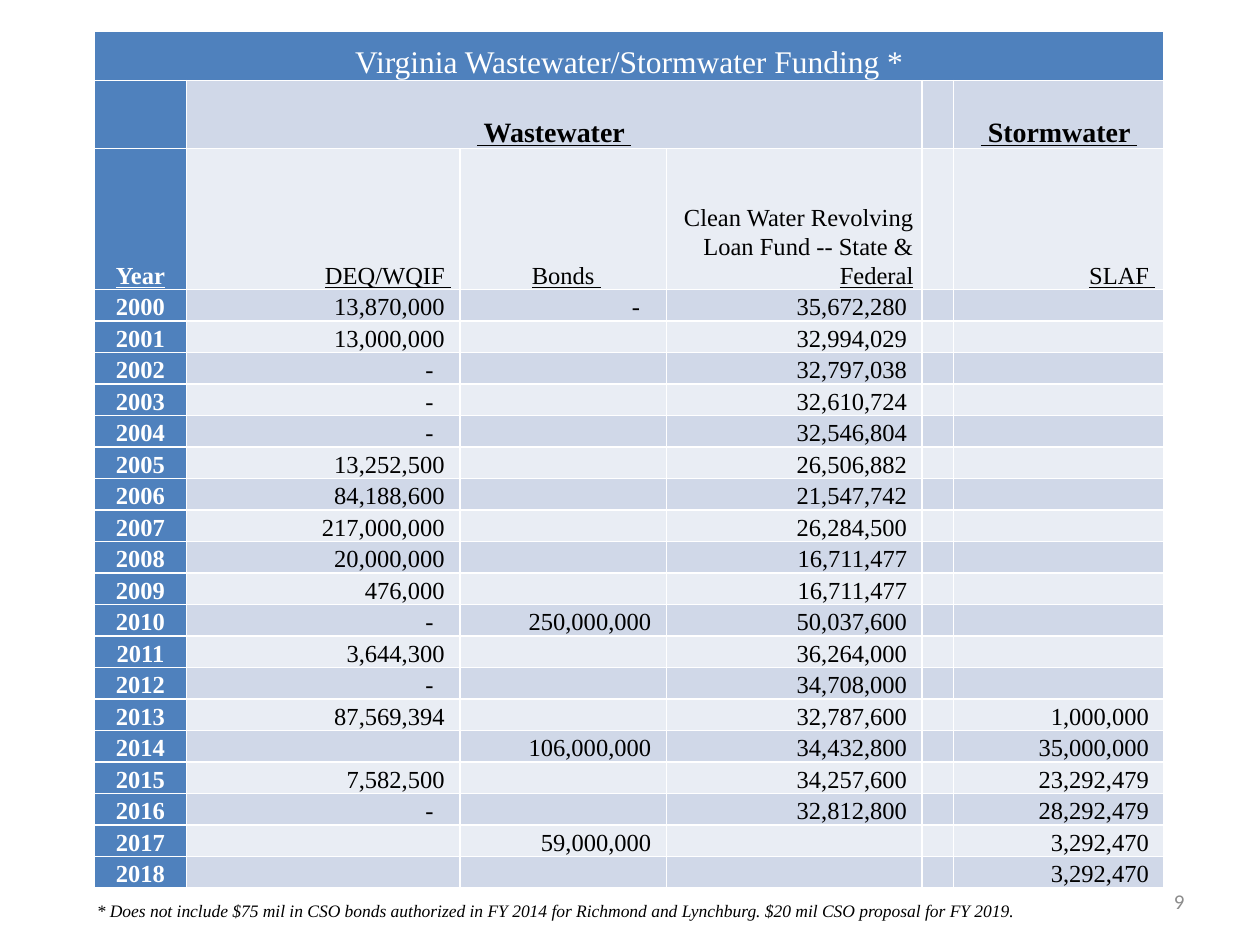
from lxml import etree
from pptx import Presentation
from pptx import util as u
from pptx.dml.color import RGBColor
from pptx.enum import text
from pptx.oxml.ns import qn

SERIF = "Times New Roman"
WHITE, BLACK, BLUE = "FFFFFF", "000000", "4F81BD"
BANDS = ["E9EDF4", "D0D8E8"]
LEFT, CENTER, RIGHT = text.PP_ALIGN.LEFT, text.PP_ALIGN.CENTER, text.PP_ALIGN.RIGHT


def color(hex_string):
    return RGBColor.from_string(hex_string)


def write(paragraph, pieces, size, hue, align, font=SERIF, bold=False, italic=False):
    paragraph.alignment = align
    for words, underline in pieces:
        run = paragraph.add_run()
        run.text = words
        run.font.name, run.font.size = font, u.Pt(size)
        run.font.bold, run.font.italic, run.font.underline = bold, italic, underline
        run.font.color.rgb = color(hue)


funding = [
    ("2000", "13,870,000", "-", "35,672,280", "", ""),
    ("2001", "13,000,000", "", "32,994,029", "", ""),
    ("2002", "-", "", "32,797,038", "", ""),
    ("2003", "-", "", "32,610,724", "", ""),
    ("2004", "-", "", "32,546,804", "", ""),
    ("2005", "13,252,500", "", "26,506,882", "", ""),
    ("2006", "84,188,600", "", "21,547,742", "", ""),
    ("2007", "217,000,000", "", "26,284,500", "", ""),
    ("2008", "20,000,000", "", "16,711,477", "", ""),
    ("2009", "476,000", "", "16,711,477", "", ""),
    ("2010", "-", "250,000,000", "50,037,600", "", ""),
    ("2011", "3,644,300", "", "36,264,000", "", ""),
    ("2012", "-", "", "34,708,000", "", ""),
    ("2013", "87,569,394", "", "32,787,600", "", "1,000,000"),
    ("2014", "", "106,000,000", "34,432,800", "", "35,000,000"),
    ("2015", "7,582,500", "", "34,257,600", "", "23,292,479"),
    ("2016", "-", "", "32,812,800", "", "28,292,479"),
    ("2017", "", "59,000,000", "", "", "3,292,470"),
    ("2018", "", "", "", "", "3,292,470"),
]
headings = {
    (0, 0): ([("Virginia Wastewater/Stormwater Funding *", False)], 18, WHITE, CENTER, False),
    (1, 1): ([(" Wastewater ", True)], 16, BLACK, CENTER, True),
    (1, 5): ([(" Stormwater ", True)], 16, BLACK, CENTER, True),
    (2, 0): ([("Year", True)], 14, WHITE, CENTER, True),
    (2, 1): ([(" ", False), ("DEQ/WQIF ", True)], 14, BLACK, RIGHT, False),
    (2, 2): ([(" ", False), ("Bonds ", True)], 14, BLACK, CENTER, False),
    (2, 3): ([("Clean Water Revolving Loan Fund -- State & ", False), ("Federal", True)],
             14, BLACK, RIGHT, False),
    (2, 5): ([(" ", False), ("SLAF ", True)], 14, BLACK, RIGHT, False),
}
column_widths = [0.73, 2.17, 1.64, 2.03, 0.25, 1.67]
row_heights = [0.39, 0.54, 1.12] + [0.25] * len(funding)

prs = Presentation()
prs.slide_width, prs.slide_height = u.Inches(10), u.Inches(7.5)
slide = prs.slides.add_slide(prs.slide_layouts[6])

page_number = slide.shapes.add_textbox(
    u.Inches(7.17), u.Inches(6.95), u.Inches(2.33), u.Inches(0.4)).text_frame
page_number.word_wrap = True
page_number.vertical_anchor = text.MSO_ANCHOR.MIDDLE
write(page_number.paragraphs[0], [("9", False)], 12, "8C8C8C", RIGHT, font="Calibri")

table = slide.shapes.add_table(
    len(row_heights), len(column_widths), u.Inches(0.75), u.Inches(0.25),
    u.Inches(sum(column_widths)), u.Inches(sum(row_heights))).table
for column, width in zip(table.columns, column_widths):
    column.width = u.Inches(width)
for row, height in zip(table.rows, row_heights):
    row.height = u.Inches(height)
table.cell(0, 0).merge(table.cell(0, 5))
table.cell(1, 1).merge(table.cell(1, 3))

for r in range(len(row_heights)):
    for c in range(len(column_widths)):
        cell = table.cell(r, c)
        cell.fill.solid()
        cell.fill.fore_color.rgb = color(BLUE if r == 0 or c == 0 else BANDS[r % 2])
        cell.vertical_anchor = text.MSO_ANCHOR.BOTTOM
        cell.margin_left = cell.margin_right = u.Inches(0.07)
        cell.margin_top = cell.margin_bottom = 0
        paragraph = cell.text_frame.paragraphs[0]
        paragraph.line_spacing = 1.07
        value = funding[r - 3][c] if r > 2 else ""
        if (r, c) in headings:
            pieces, size, hue, align, bold = headings[r, c]
            write(paragraph, pieces, size, hue, align, bold=bold)
        elif value and c == 0:
            write(paragraph, [(value, False)], 14, WHITE, CENTER, bold=True)
        elif value:
            cell.margin_right = u.Inches(0.21 if value == "-" else 0.12)
            write(paragraph, [(value, False)], 14, BLACK, RIGHT)
        else:
            etree.SubElement(paragraph._p, qn("a:endParaRPr"), sz="1000")

footnote = slide.shapes.add_textbox(
    u.Inches(0.67), u.Inches(7.09), u.Inches(8.58), u.Inches(0.27)).text_frame
footnote.word_wrap = True
write(footnote.paragraphs[0],
      [("* Does not include $75 mil in CSO bonds authorized in FY 2014 for Richmond and "
        "Lynchburg. $20 mil CSO proposal for FY 2019.", False)],
      10, BLACK, LEFT, italic=True)

prs.save("out.pptx")
